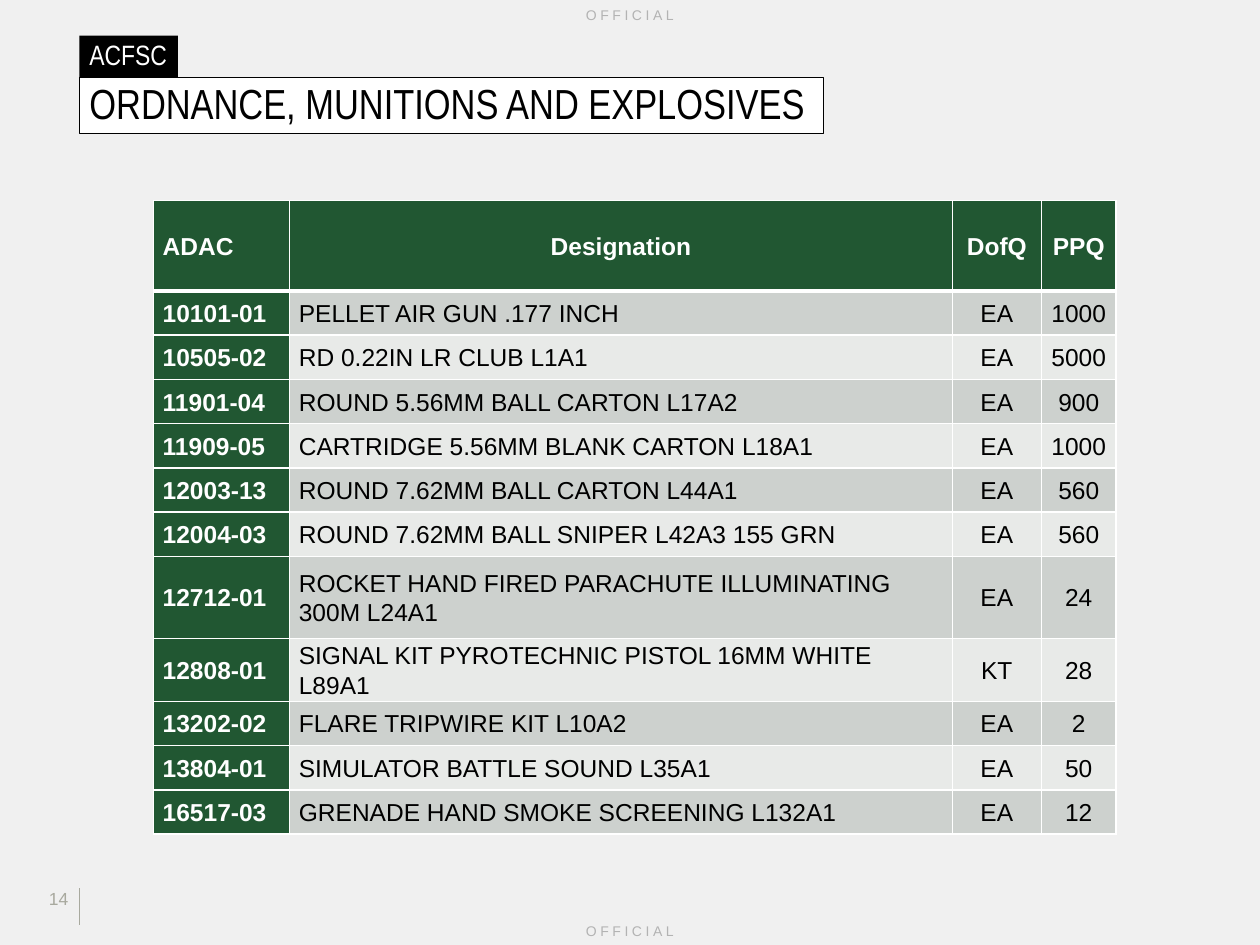
from lxml import etree
from pptx import Presentation
from pptx.dml.color import RGBColor
from pptx.enum.shapes import MSO_CONNECTOR, MSO_SHAPE
from pptx.enum.text import MSO_ANCHOR, PP_ALIGN
from pptx.oxml.ns import qn
from pptx.util import Pt

LEFT, CENTER, RIGHT = PP_ALIGN.LEFT, PP_ALIGN.CENTER, PP_ALIGN.RIGHT
TOP, MIDDLE, BOTTOM = MSO_ANCHOR.TOP, MSO_ANCHOR.MIDDLE, MSO_ANCHOR.BOTTOM
RECTANGLE, STRAIGHT = MSO_SHAPE.RECTANGLE, MSO_CONNECTOR.STRAIGHT

BLACK = RGBColor(0x00, 0x00, 0x00)
WHITE = RGBColor(0xFF, 0xFF, 0xFF)
BACKGROUND = RGBColor(0xF0, 0xF0, 0xF0)
MARKING = RGBColor(0xB3, 0xB3, 0xB3)
FOOTER = RGBColor(0xA8, 0xA9, 0x9E)
GREEN = RGBColor(0x21, 0x57, 0x32)
DARK_BAND = RGBColor(0xCD, 0xD1, 0xCE)
LIGHT_BAND = RGBColor(0xE8, 0xEA, 0xE8)


def set_text(tf, text, size, font, color, align=LEFT, bold=False, spacing=None):
    """Fill a text frame with one formatted paragraph and return its run."""
    tf.text = text
    tf.word_wrap = True
    p = tf.paragraphs[0]
    p.alignment = align
    p.line_spacing = spacing
    r = p.runs[0]
    r.font.size = Pt(size)
    r.font.name = font
    r.font.bold = bold
    r.font.color.rgb = color
    return r


def add_border(cell, side, width):
    """Draw a white border; call in the order L, R, T, B, before the fill."""
    tc_pr = cell._tc.get_or_add_tcPr()
    ln = etree.SubElement(tc_pr, qn(f"a:ln{side}"), w=str(Pt(width)))
    fill = etree.SubElement(ln, qn("a:solidFill"))
    etree.SubElement(fill, qn("a:srgbClr"), val=str(WHITE))


prs = Presentation()
prs.slide_width, prs.slide_height = Pt(720), Pt(540)
s = prs.slides.add_slide(prs.slide_layouts[6])
s.background.fill.solid()
s.background.fill.fore_color.rgb = BACKGROUND

# Security marking at the foot and head of the page
for top in (523.2, 0):
    box = s.shapes.add_textbox(Pt(274.6), Pt(top), Pt(170.8), Pt(17))
    box.text_frame.vertical_anchor = MIDDLE
    r = set_text(box.text_frame, "OFFICIAL", 8, "Arial", MARKING, CENTER)
    r.font._element.set("spc", "200")

# Footer rule and page number
rule = s.shapes.add_connector(STRAIGHT, Pt(45.4), Pt(507.5), Pt(45.4), Pt(528.5))
rule.line.color.rgb = FOOTER
rule.line.width = Pt(1)
etree.SubElement(rule._element.spPr, qn("a:effectLst"))

number = s.shapes.add_textbox(Pt(17.3), Pt(504), Pt(28.8), Pt(25.2))
number.text_frame.vertical_anchor = TOP
set_text(number.text_frame, "14", 10, "Arial", FOOTER, RIGHT)

# Ammunition table
HEADERS = ("ADAC", "Designation", "DofQ", "PPQ")
ITEMS = (
    ("10101-01", "PELLET AIR GUN .177 INCH", "EA", "1000"),
    ("10505-02", "RD 0.22IN LR CLUB L1A1", "EA", "5000"),
    ("11901-04", "ROUND 5.56MM BALL CARTON L17A2", "EA", "900"),
    ("11909-05", "CARTRIDGE 5.56MM BLANK CARTON L18A1", "EA", "1000"),
    ("12003-13", "ROUND 7.62MM BALL CARTON L44A1", "EA", "560"),
    ("12004-03", "ROUND 7.62MM BALL SNIPER L42A3 155 GRN", "EA", "560"),
    ("12712-01", "ROCKET HAND FIRED PARACHUTE ILLUMINATING 300M L24A1", "EA", "24"),
    ("12808-01", "SIGNAL KIT PYROTECHNIC PISTOL 16MM WHITE L89A1", "KT", "28"),
    ("13202-02", "FLARE TRIPWIRE KIT L10A2", "EA", "2"),
    ("13804-01", "SIMULATOR BATTLE SOUND L35A1", "EA", "50"),
    ("16517-03", "GRENADE HAND SMOKE SCREENING L132A1", "EA", "12"),
)
COLUMN_WIDTHS = (77.8, 378.6, 50.9, 42.8)
HEADER_HEIGHT, ROW_HEIGHT, ROCKET_ROW_HEIGHT = 51.8, 25.3, 46.8
ROCKET_ROW = 7

rows = (HEADERS, *ITEMS)
table = s.shapes.add_table(len(rows), len(HEADERS), Pt(87.8), Pt(114.5),
                           Pt(sum(COLUMN_WIDTHS)), Pt(361)).table
for column, width in zip(table.columns, COLUMN_WIDTHS):
    column.width = Pt(width)
for i, row in enumerate(rows):
    height = {0: HEADER_HEIGHT, ROCKET_ROW: ROCKET_ROW_HEIGHT}.get(i, ROW_HEIGHT)
    table.rows[i].height = Pt(height)
    band = DARK_BAND if i % 2 else LIGHT_BAND
    for j, text in enumerate(row):
        cell = table.cell(i, j)
        heading = i == 0 or j == 0
        centered = j > 1 or (i == 0 and j == 1)
        cell.margin_left = cell.margin_right = Pt(5.2)
        cell.margin_top = cell.margin_bottom = 0
        cell.vertical_anchor = MIDDLE
        set_text(cell.text_frame, text, 14, "Arial", WHITE if heading else BLACK,
                 CENTER if centered else LEFT, heading, 1.07)
        for side in "LRTB":
            thick = (i == 0 and side == "B") or (i == 1 and side == "T")
            add_border(cell, side, 3 if thick else 1)
        cell.fill.solid()
        cell.fill.fore_color.rgb = GREEN if heading else band

# Course tag and slide title
for text, top, width, height, size, fill, color, anchor, margin in (
    ("ACFSC", 20.3, 56.3, 24, 16, BLACK, WHITE, BOTTOM, 3.6),
    ("ORDNANCE, MUNITIONS AND EXPLOSIVES", 44.2, 425.3, 32, 24, WHITE, BLACK, MIDDLE, 2.9),
):
    sp = s.shapes.add_shape(RECTANGLE, Pt(45.4), Pt(top), Pt(width), Pt(height))
    sp.shadow.inherit = False
    sp.fill.solid()
    sp.fill.fore_color.rgb = fill
    if fill == WHITE:
        sp.line.color.rgb = BLACK
        sp.line.width = Pt(0.75)
    else:
        sp.line.fill.background()
    tf = sp.text_frame
    tf.vertical_anchor = anchor
    tf.margin_left, tf.margin_right = Pt(5.7), 0
    tf.margin_top = tf.margin_bottom = Pt(margin)
    set_text(tf, text, size, "Arial Narrow", color, spacing=0.9)

prs.save("out.pptx")
